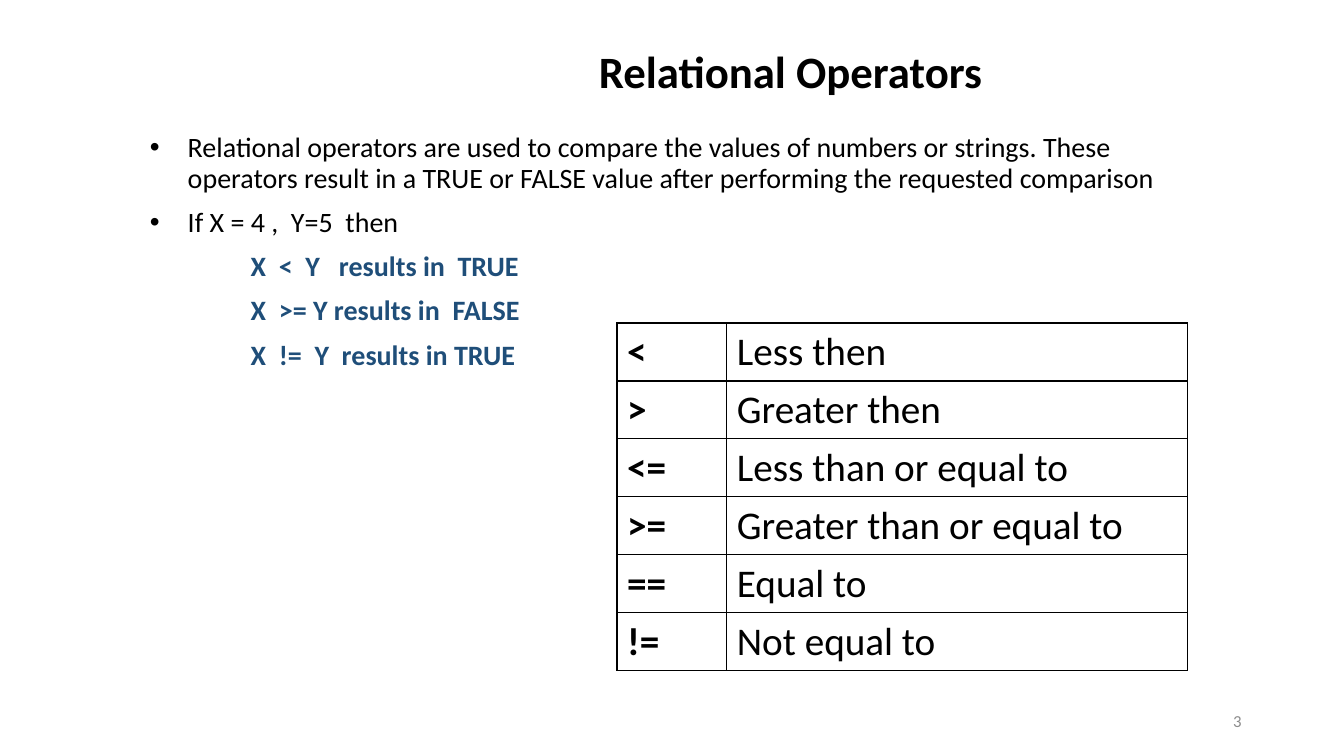
from dataclasses import dataclass

from pptx import Presentation
from pptx.dml.color import RGBColor
from pptx.enum.text import MSO_ANCHOR, MSO_AUTO_SIZE, PP_ALIGN
from pptx.oxml.xmlchemy import OxmlElement
from pptx.util import Pt

# Content
TITLE = "Relational Operators"
BULLETS = [
    "Relational operators are used to compare the values of numbers or strings. "
    "These operators result in a TRUE or FALSE value after performing the requested comparison",
    "If X = 4 ,  Y=5  then",
]
RESULTS = [
    "X  <  Y   results in  TRUE",
    "X  >= Y results in  FALSE",
    "X  !=  Y  results in TRUE",
]
OPERATORS = [
    ("<", "Less then"),
    (">", "Greater then"),
    ("<=", "Less than or equal to"),
    (">=", "Greater than or equal to"),
    ("==", "Equal to"),
    ("!=", "Not equal to"),
]
PAGE_NUMBER = "3"


@dataclass(frozen=True)
class Theme:
    font: str = "Calibri"
    black: RGBColor = RGBColor(0x00, 0x00, 0x00)
    blue: RGBColor = RGBColor(0x1F, 0x4E, 0x79)
    gray: RGBColor = RGBColor(0x8C, 0x8C, 0x8C)
    title_size: int = 32
    table_size: int = 28
    body_size: int = 20
    number_size: int = 12


THEME = Theme()

# Layout in points: left, top, width, height
SLIDE_SIZE = (960, 540)
TITLE_BOX = (420.5, 21, 365, 63)
BODY_BOX = (100, 92, 771, 132)
NUMBER_BOX = (678, 500.5, 216, 28.5)
TABLE_ORIGIN = (440.7, 230.7)
COLUMN_WIDTHS = (78.5, 329)
ROW_HEIGHT = 41.4
BULLET_INDENT = 27
RESULT_INDENT = 72


def style(paragraph, size, color, bold=False):
    font = paragraph.font
    font.name, font.size, font.bold = THEME.font, Pt(size), bold
    font.color.rgb = color


def add_text_box(slide, box, anchor):
    frame = slide.shapes.add_textbox(*map(Pt, box)).text_frame
    frame.word_wrap = True
    frame.vertical_anchor = anchor
    return frame


def set_indent(paragraph, left, bullet=False):
    properties = paragraph._p.get_or_add_pPr()
    properties.set("marL", str(Pt(left)))
    properties.set("indent", str(-Pt(left) if bullet else 0))
    if bullet:
        typeface = OxmlElement("a:buFont")
        typeface.set("typeface", "Arial")
        mark = OxmlElement("a:buChar")
        mark.set("char", "•")
        properties.extend([typeface, mark])


def add_borders(cell):
    properties = cell._tc.get_or_add_tcPr()
    for side in ("lnL", "lnR", "lnT", "lnB"):
        line = OxmlElement(f"a:{side}")
        line.set("w", str(Pt(1)))
        fill = OxmlElement("a:solidFill")
        color = OxmlElement("a:srgbClr")
        color.set("val", str(THEME.black))
        fill.append(color)
        line.append(fill)
        properties.append(line)


def add_title(slide):
    title = slide.shapes.title
    title.left, title.top, title.width, title.height = map(Pt, TITLE_BOX)
    frame = title.text_frame
    frame.text = TITLE
    frame.auto_size = MSO_AUTO_SIZE.NONE
    frame.vertical_anchor = MSO_ANCHOR.MIDDLE
    paragraph = frame.paragraphs[0]
    paragraph.alignment = PP_ALIGN.LEFT
    paragraph.line_spacing = 0.9
    style(paragraph, THEME.title_size, THEME.black, bold=True)


def add_body(slide):
    frame = add_text_box(slide, BODY_BOX, MSO_ANCHOR.TOP)
    for index, text in enumerate(BULLETS + RESULTS):
        is_bullet = index < len(BULLETS)
        paragraph = frame.add_paragraph() if index else frame.paragraphs[0]
        paragraph.text = text
        paragraph.line_spacing = 0.9
        paragraph.space_before = Pt(10 if index else 0)
        set_indent(paragraph, BULLET_INDENT if is_bullet else RESULT_INDENT, is_bullet)
        style(paragraph, THEME.body_size, THEME.black if is_bullet else THEME.blue, not is_bullet)


def add_operator_table(slide):
    size = (sum(COLUMN_WIDTHS), ROW_HEIGHT * len(OPERATORS))
    frame = slide.shapes.add_table(
        len(OPERATORS), len(COLUMN_WIDTHS), *map(Pt, TABLE_ORIGIN + size))
    table = frame.table
    table.first_row = table.horz_banding = False
    for column, width in zip(table.columns, COLUMN_WIDTHS):
        column.width = Pt(width)
    for row_index, row in enumerate(OPERATORS):
        table.rows[row_index].height = Pt(ROW_HEIGHT)
        for column_index, text in enumerate(row):
            cell = table.cell(row_index, column_index)
            cell.text = text
            add_borders(cell)
            cell.fill.background()
            style(cell.text_frame.paragraphs[0], THEME.table_size, THEME.black, column_index == 0)


def add_page_number(slide):
    frame = add_text_box(slide, NUMBER_BOX, MSO_ANCHOR.MIDDLE)
    frame.text = PAGE_NUMBER
    paragraph = frame.paragraphs[0]
    paragraph.alignment = PP_ALIGN.RIGHT
    style(paragraph, THEME.number_size, THEME.gray)


def main():
    presentation = Presentation()
    presentation.slide_width, presentation.slide_height = map(Pt, SLIDE_SIZE)
    slide = presentation.slides.add_slide(presentation.slide_layouts[5])
    add_title(slide)
    add_page_number(slide)
    add_operator_table(slide)
    add_body(slide)
    presentation.save("out.pptx")


if __name__ == "__main__":
    main()
